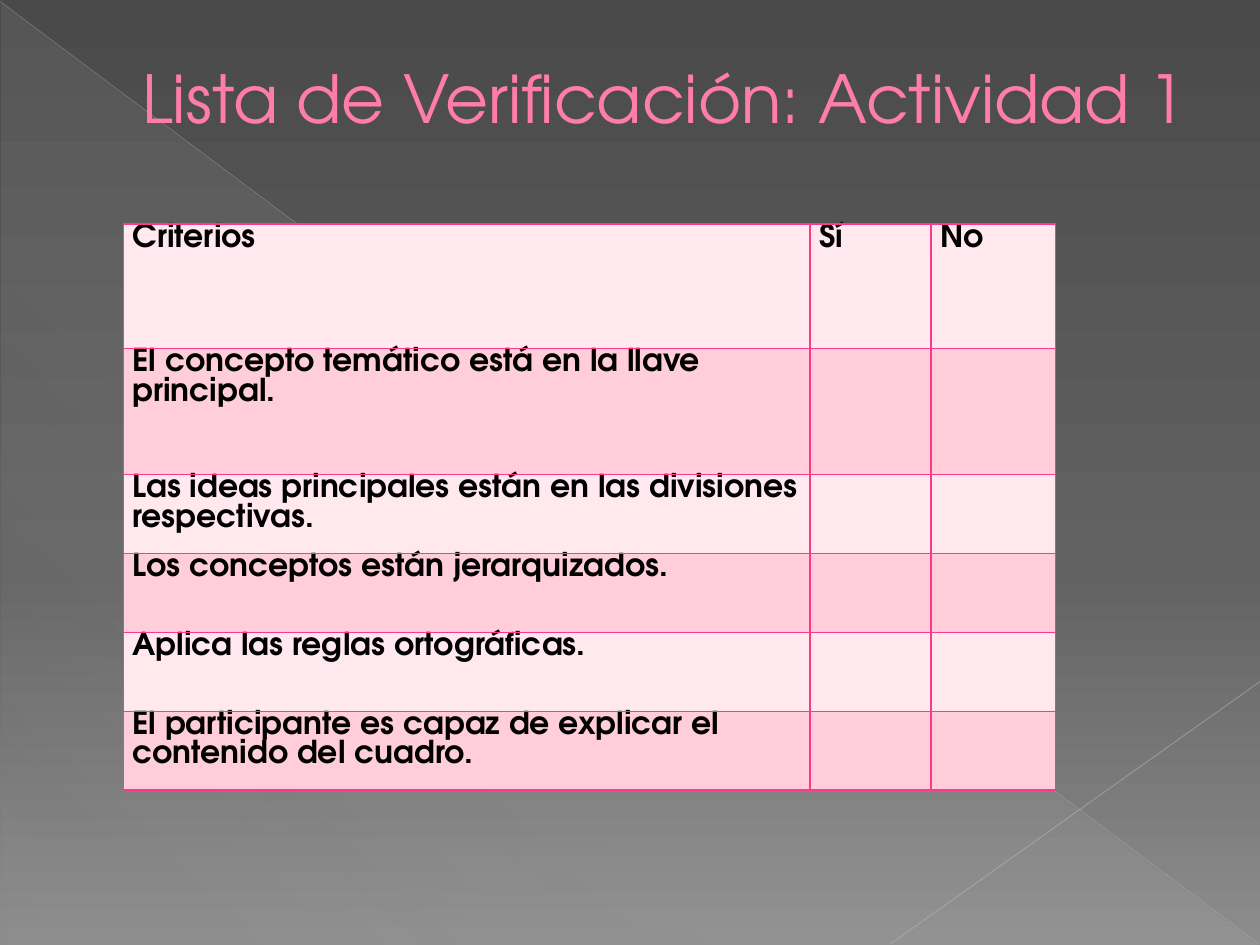
import dataclasses
import typing

import lxml.etree
import pptx
import pptx.dml.color
import pptx.enum.shapes
import pptx.enum.text
import pptx.oxml.ns
import pptx.util

Cm = pptx.util.Cm
Pt = pptx.util.Pt
qn = pptx.oxml.ns.qn


@dataclasses.dataclass(frozen=True)
class Theme:
    font: str = "TeX Gyre Adventor"
    title_size: float = 37.8
    title_leading: float = 45
    cell_size: float = 18
    cell_leading: float = 16.7
    title: str = "FF7DA7"
    title_outline: str = "B12761"
    text: str = "000000"
    border: str = "FF388C"
    bands: tuple[str, str] = ("FFE8EE", "FFCEDA")


class Stop(typing.NamedTuple):
    position: int
    color: str
    opacity: int = 100


class Ray(typing.NamedTuple):
    start: tuple[float, float]
    end: tuple[float, float]
    color: str
    width: float
    opacity: int


class Criterion(typing.NamedTuple):
    text: str
    height: float


THEME = Theme()
BACKGROUND = [Stop(0, "4A4A4A"), Stop(60, "626262"), Stop(100, "8C8C8C")]
SHEEN = [Stop(0, "D2D2D2", 10), Stop(70, "D2D2D2", 8), Stop(100, "D2D2D2", 1)]
RAYS = [
    Ray((0, 0.03), (25.37, 19.02), "BFBFBF", 0.39, 35),
    Ray((25.4, 13.74), (17.96, 19.02), "C6C6C6", 0.47, 45),
]
COLUMN_WIDTHS = [13.84, 2.44, 2.51]
ANSWERS = ["Sí", "No"]
CRITERIA = [
    Criterion("Criterios", 2.51),
    Criterion("El concepto temático está en la llave principal.", 2.54),
    Criterion("Las ideas principales están en las divisiones respectivas.", 1.59),
    Criterion("Los conceptos están jerarquizados.", 1.59),
    Criterion("Aplica las reglas ortográficas.", 1.59),
    Criterion("El participante es capaz de explicar el contenido del cuadro.", 1.59),
]


def rgb(color: str) -> pptx.dml.color.RGBColor:
    return pptx.dml.color.RGBColor.from_string(color)


def add_color(parent, color: str, opacity: int = 100) -> None:
    srgb = lxml.etree.SubElement(parent, qn("a:srgbClr"), val=color)
    if opacity < 100:
        lxml.etree.SubElement(srgb, qn("a:alpha"), val=str(opacity * 1000))


def add_line(parent, tag: str, color: str, width: float, opacity: int = 100):
    line = lxml.etree.SubElement(parent, qn(tag), w=str(int(Pt(width))))
    add_color(lxml.etree.SubElement(line, qn("a:solidFill")), color, opacity)
    return line


def set_gradient(fill, owner, stops: list[Stop], angle: int) -> None:
    fill.gradient()
    gradient = owner.find(".//" + qn("a:gradFill"))
    stop_list = gradient.find(qn("a:gsLst"))
    for default_stop in list(stop_list):
        stop_list.remove(default_stop)
    for stop in stops:
        entry = lxml.etree.SubElement(stop_list, qn("a:gs"), pos=str(stop.position * 1000))
        add_color(entry, stop.color, stop.opacity)
    gradient.find(qn("a:lin")).set("ang", str(angle * 60000))


def style_paragraph(paragraph, size: float, leading: float, color: str, bold: bool) -> None:
    paragraph.line_spacing = Pt(leading)
    for run in paragraph.runs:
        run.font.name = THEME.font
        run.font.size = Pt(size)
        run.font.bold = bold
        run.font.color.rgb = rgb(color)


def draw_backdrop(slide) -> None:
    set_gradient(slide.background.fill, slide.element, BACKGROUND, 90)
    sheen = slide.shapes.add_shape(
        pptx.enum.shapes.MSO_SHAPE.RIGHT_TRIANGLE, Cm(0.03), Cm(0.05), Cm(25.35), Cm(19)
    )
    sheen.shadow.inherit = False
    sheen.line.fill.background()
    set_gradient(sheen.fill, sheen.element, SHEEN, 133)
    for ray in RAYS:
        draw_ray(slide, ray)


def draw_ray(slide, ray: Ray) -> None:
    connector = slide.shapes.add_connector(
        pptx.enum.shapes.MSO_CONNECTOR.STRAIGHT,
        *(Cm(length) for length in ray.start + ray.end),
    )
    properties = connector.element.spPr
    add_line(properties, "a:ln", ray.color, ray.width, ray.opacity)
    lxml.etree.SubElement(properties, qn("a:effectLst"))


def draw_title(slide, text: str) -> None:
    title = slide.shapes.add_textbox(Cm(1.27), Cm(0.74), Cm(23.42), Cm(3.89))
    frame = title.text_frame
    frame.word_wrap = True
    frame.vertical_anchor = pptx.enum.text.MSO_ANCHOR.TOP
    frame.margin_top = Cm(0.43)
    frame.text = text
    paragraph = frame.paragraphs[0]
    style_paragraph(paragraph, THEME.title_size, THEME.title_leading, THEME.title, False)
    paragraph._p.get_or_add_pPr().set("marL", str(int(Cm(1.35))))
    run_properties = paragraph.runs[0].font._element
    run_properties.insert(0, add_line(run_properties, "a:ln", THEME.title_outline, 0.5))


def style_cell(cell, text: str, band: str) -> None:
    cell.margin_left = cell.margin_right = Cm(0.18)
    cell.margin_top = cell.margin_bottom = 0
    properties = cell._tc.get_or_add_tcPr()
    for side in ("a:lnL", "a:lnR", "a:lnT", "a:lnB"):
        add_line(properties, side, THEME.border, 1)
    cell.fill.solid()
    cell.fill.fore_color.rgb = rgb(band)
    if text:
        cell.text_frame.text = text
        paragraph = cell.text_frame.paragraphs[0]
        paragraph.space_before = paragraph.space_after = Pt(1)
        style_paragraph(paragraph, THEME.cell_size, THEME.cell_leading, THEME.text, True)


def draw_checklist(slide) -> None:
    checklist = slide.shapes.add_table(
        len(CRITERIA), len(COLUMN_WIDTHS), Cm(2.49), Cm(4.52),
        Cm(sum(COLUMN_WIDTHS)), Cm(sum(criterion.height for criterion in CRITERIA)),
    ).table
    for column, width in zip(checklist.columns, COLUMN_WIDTHS):
        column.width = Cm(width)
    for index, criterion in enumerate(CRITERIA):
        checklist.rows[index].height = Cm(criterion.height)
        answers = ANSWERS if index == 0 else [""] * len(ANSWERS)
        for cell, text in zip(checklist.rows[index].cells, [criterion.text, *answers]):
            style_cell(cell, text, THEME.bands[index % 2])


def main() -> None:
    presentation = pptx.Presentation()
    presentation.slide_width = Cm(25.4)
    presentation.slide_height = Cm(19.05)
    slide = presentation.slides.add_slide(presentation.slide_layouts[6])
    draw_backdrop(slide)
    draw_title(slide, "Lista de Verificación: Actividad 1")
    draw_checklist(slide)
    presentation.save("out.pptx")


if __name__ == "__main__":
    main()
